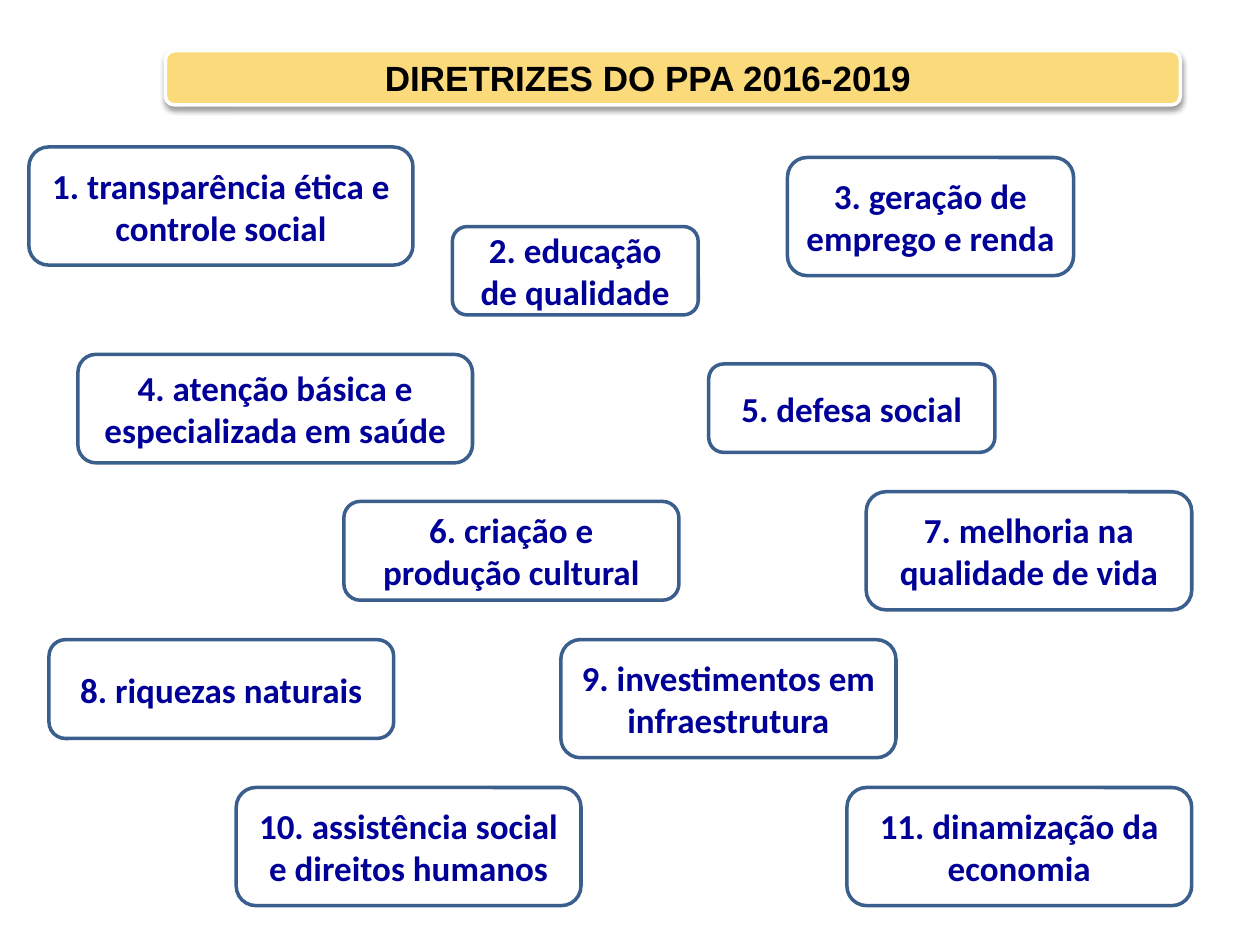
"""Build the slide of the PPA 2016-2019 guidelines."""
from lxml import etree
from pptx import Presentation
from pptx import util as u
from pptx.dml.color import RGBColor
from pptx.enum import shapes, text
from pptx.oxml import ns

WHITE = RGBColor(0xFF, 0xFF, 0xFF)
GOLD = RGBColor(0xFA, 0xDA, 0x7A)
STEEL = RGBColor(0x3A, 0x5F, 0x8C)
NAVY = RGBColor(0x00, 0x00, 0x99)
INK = RGBColor(0x00, 0x00, 0x01)

GOALS = [
    ("1. transparência ética e controle social", 16.5, 84, 219.5, 67.5),
    ("2. educação de qualidade", 258.5, 129.5, 140.5, 50.5),
    ("3. geração de emprego e renda", 450, 90, 163.5, 67.5),
    ("4. atenção básica e especializada em saúde", 44.5, 202.5, 225.5, 62),
    ("5. defesa social", 405, 208, 163.5, 50.5),
    ("6. criação e produção cultural", 196.5, 286.5, 191.5, 56.5),
    ("7. melhoria na qualidade de vida", 495, 281, 186, 67.5),
    ("8. riquezas naturais", 28, 365.5, 197, 56.5),
    ("9. investimentos em infraestrutura", 320.5, 365.5, 191.5, 67.5),
    ("10. assistência social e direitos humanos", 135, 450, 197, 67.5),
    ("11. dinamização da economia", 484, 450, 197, 67.5),
]


class Deck:
    """Hold the text style and the current slide."""

    style = {"size": u.Pt(20), "bold": True}

    def __init__(self, wide, high):
        self.show = Presentation()
        self.show.slide_width, self.show.slide_height = u.Pt(wide), u.Pt(high)
        self.slide = self.show.slides.add_slide(self.show.slide_layouts[6])

    def label(self, shape, words, face, tint):
        frame = shape.text_frame
        frame.word_wrap = True
        frame.vertical_anchor = text.MSO_ANCHOR.MIDDLE
        para = frame.paragraphs[0]
        para.alignment = text.PP_ALIGN.CENTER
        run = para.add_run()
        run.text = words
        for key, value in {**self.style, "name": face}.items():
            setattr(run.font, key, value)
        run.font.color.rgb = tint

    def panel(self, area, edge, fill=None):
        kind = shapes.MSO_SHAPE.ROUNDED_RECTANGLE
        shape = self.slide.shapes.add_shape(kind, *map(u.Pt, area))
        shape.shadow.inherit = False
        if fill is None:
            shape.fill.background()
        else:
            shape.fill.solid()
            shape.fill.fore_color.rgb = fill
        shape.line.color.rgb = edge
        shape.line.width = u.Pt(2)
        return shape

    def shade(self, shape):
        glow = shape.element.spPr.find(ns.qn("a:effectLst"))
        cast = etree.SubElement(glow, ns.qn("a:outerShdw"), blurRad=str(u.Pt(3)),
                                dist=str(u.Pt(2)), dir="5400000", rotWithShape="0")
        tint = etree.SubElement(cast, ns.qn("a:srgbClr"), val="000000")
        etree.SubElement(tint, ns.qn("a:alpha"), val="40000")

    def title(self, words, area):
        box = self.slide.shapes.add_textbox(*map(u.Pt, area))
        self.label(box, words, "Arial", INK)

    def goal(self, words, *area):
        self.label(self.panel(area, STEEL), words, "Calibri", NAVY)


def main():
    deck = Deck(720, 540)
    deck.shade(deck.panel((94.5, 29, 580, 31), WHITE, GOLD))
    deck.title("DIRETRIZES DO PPA 2016-2019", (99.5, 16.5, 541.5, 56))
    for goal in GOALS:
        deck.goal(*goal)
    deck.show.save("out.pptx")


if __name__ == "__main__":
    main()
